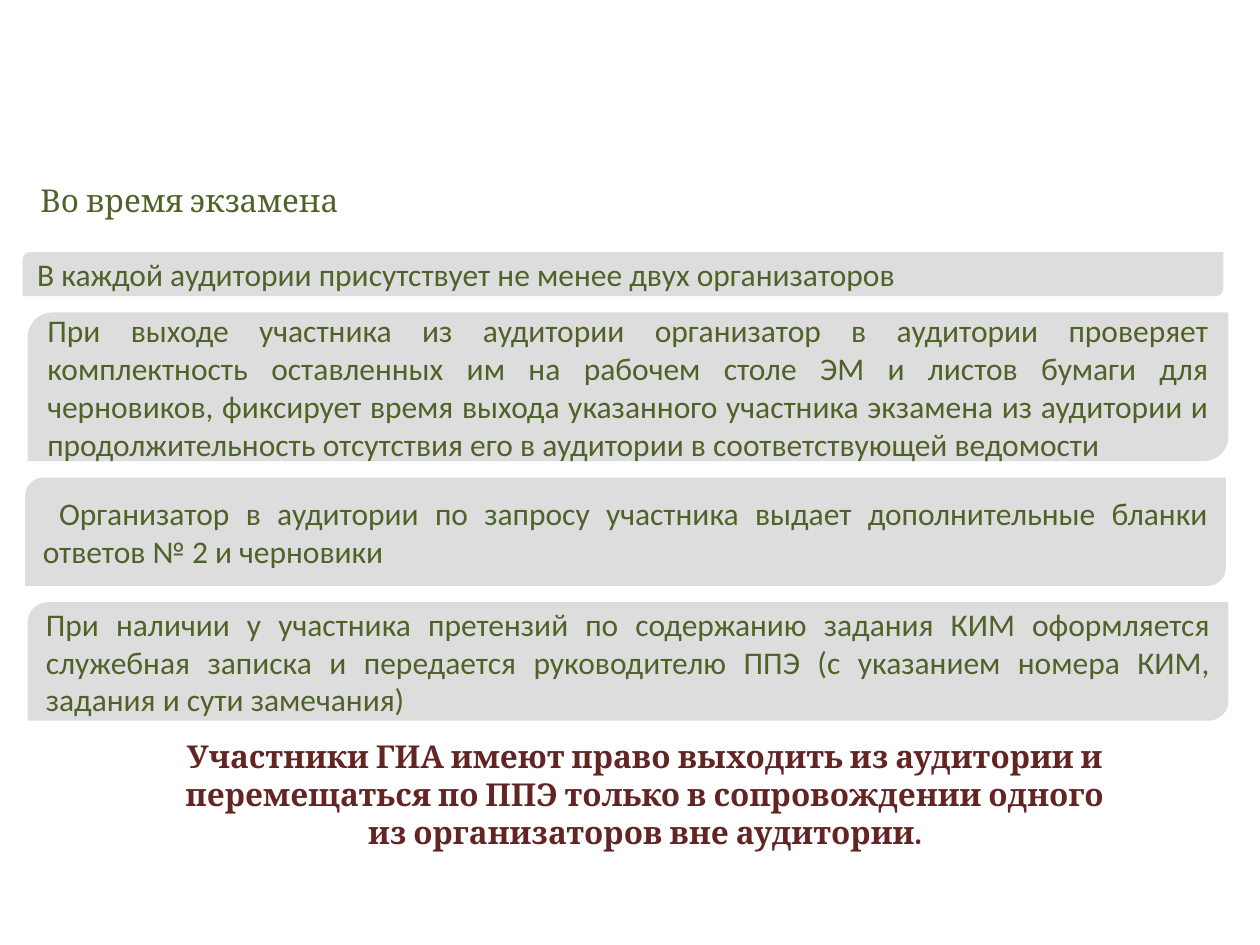
from lxml.etree import SubElement
from pptx import Presentation
from pptx.dml.color import RGBColor
from pptx.enum.shapes import MSO_SHAPE
from pptx.enum.text import MSO_ANCHOR, MSO_AUTO_SIZE, PP_ALIGN
from pptx.oxml.ns import qn
from pptx.util import Inches, Pt

COLORS = {"green": "4F6228", "wine": "632523", "gray": "BFBFBF"}
COLS, ROWS = 100, 75  # grid of the slide


class Page:
    def __init__(self, deck):
        self.slide = deck.slides.add_slide(deck.slide_layouts[5])
        self.col = deck.slide_width / COLS
        self.row = deck.slide_height / ROWS

    def area(self, x, y, w, h):
        return (round(x * self.col), round(y * self.row),
                round(w * self.col), round(h * self.row))

    def label(self, shape, text, font, color, align, anchor, bold=False):
        frame = shape.text_frame
        frame.word_wrap = True
        frame.auto_size = MSO_AUTO_SIZE.NONE
        frame.vertical_anchor = anchor
        para = frame.paragraphs[0]
        para.alignment = align
        run = para.add_run()
        run.text = text
        run.font.name = font
        run.font.size = Pt(18)
        run.font.bold = bold
        run.font.color.rgb = RGBColor.from_string(COLORS[color])

    def title(self, text, *box):
        shape = self.slide.shapes.title
        shape.left, shape.top, shape.width, shape.height = self.area(*box)
        self.label(shape, text, "Cambria", "green", PP_ALIGN.LEFT, MSO_ANCHOR.TOP)

    def card(self, text, *box):
        shape = self.slide.shapes.add_shape(
            MSO_SHAPE.ROUND_2_DIAG_RECTANGLE, *self.area(*box))
        shape.shadow.inherit = False
        shape.line.fill.background()
        shape.fill.solid()
        shape.fill.fore_color.rgb = RGBColor.from_string(COLORS["gray"])
        # Translucent fill
        tint = shape.element.spPr.find(qn("a:solidFill"))[0]
        SubElement(tint, qn("a:alpha"), val="52000")
        self.label(shape, text, "Calibri", "green", PP_ALIGN.JUSTIFY, MSO_ANCHOR.MIDDLE)

    def note(self, text, *box):
        shape = self.slide.shapes.add_textbox(*self.area(*box))
        self.label(shape, text, "Cambria", "wine", PP_ALIGN.CENTER, MSO_ANCHOR.TOP, True)


# Left column, height in rows, text
RULES = [
    (1.8, 3.5, "В каждой аудитории присутствует не менее двух организаторов"),
    (2.2, 11.8, "При выходе участника из аудитории организатор в аудитории "
     "проверяет комплектность оставленных им на рабочем столе ЭМ и листов "
     "бумаги для черновиков, фиксирует время выхода указанного участника "
     "экзамена из аудитории и продолжительность отсутствия его в аудитории "
     "в соответствующей ведомости"),
    (2, 8.6, " Организатор в аудитории по запросу участника выдает "
     "дополнительные бланки ответов № 2 и черновики"),
    (2.2, 9.4, "При наличии у участника претензий по содержанию задания КИМ "
     "оформляется служебная записка и передается руководителю ППЭ "
     "(с указанием номера КИМ, задания и сути замечания)"),
]
GAP = 1.3


def main():
    deck = Presentation()
    deck.slide_width, deck.slide_height = Inches(10), Inches(7.5)
    page = Page(deck)

    # Heading
    page.title("Во время экзамена", 2.2, 13.9, 62, 4)

    # Stack of rules
    top = 20
    for left, high, text in RULES:
        page.card(text, left, top, 95.3, high)
        top += high + GAP

    # Closing note
    page.note("Участники ГИА имеют право выходить из аудитории "
              "и перемещаться по ППЭ только в сопровождении одного "
              "из организаторов вне аудитории.", 12.2, 58, 78, 10.1)

    deck.save("out.pptx")


if __name__ == "__main__":
    main()
